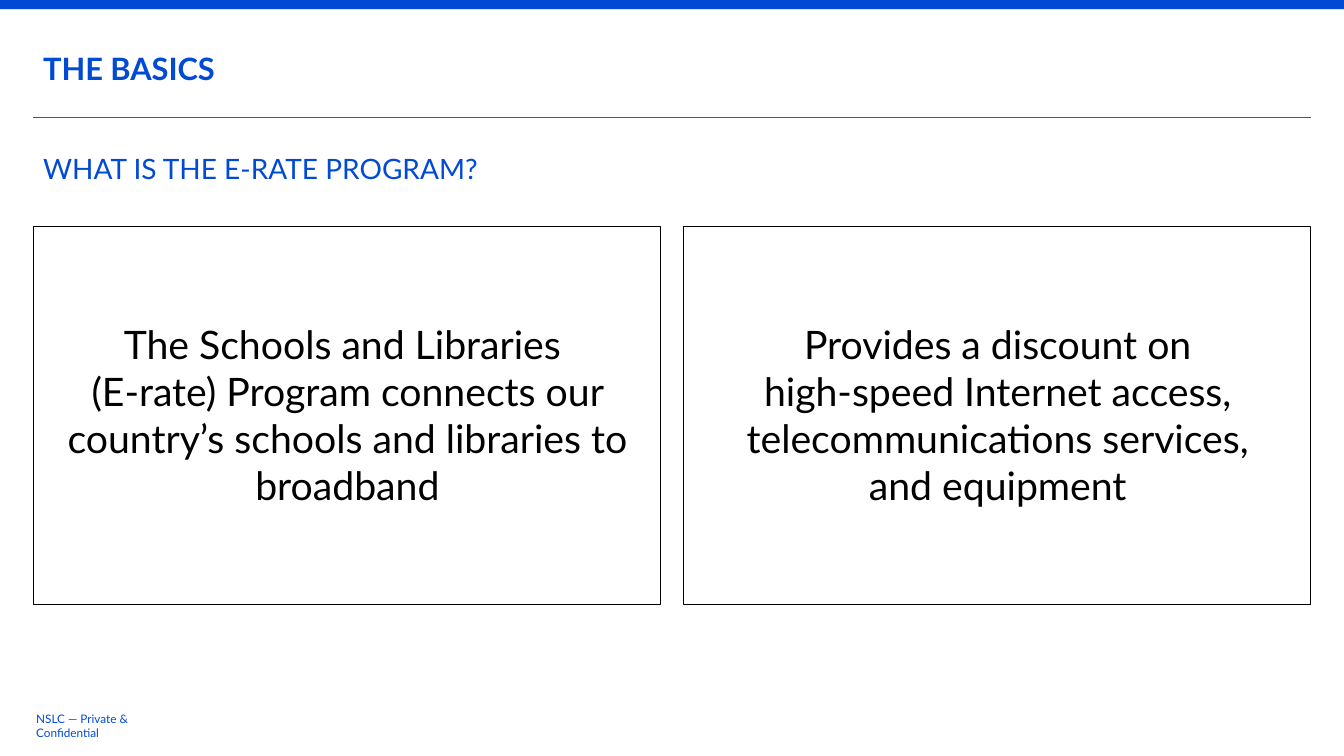
from lxml import etree
from pptx import Presentation
from pptx.dml.color import RGBColor
from pptx.enum.shapes import MSO_CONNECTOR, MSO_SHAPE
from pptx.enum.text import MSO_ANCHOR, PP_ALIGN
from pptx.oxml.ns import qn
from pptx.util import Inches, Pt

STRAIGHT = MSO_CONNECTOR.STRAIGHT
RECTANGLE = MSO_SHAPE.RECTANGLE
TOP, MIDDLE = MSO_ANCHOR.TOP, MSO_ANCHOR.MIDDLE
LEFT, CENTER = PP_ALIGN.LEFT, PP_ALIGN.CENTER

WIDTH, HEIGHT = 13.33, 7.5
MARGIN = 0.33
CONTENT_WIDTH = WIDTH - 2 * MARGIN
GUTTER = 0.23
BLUE, BLACK, WHITE, GRAY = "004AD4", "000000", "FFFFFF", "595959"

HEADING = {"size": Pt(22), "bold": True}
SUBHEADING = {"size": Pt(20)}
STATEMENT = {"size": Pt(28)}
FOOTNOTE = {"size": Pt(8.4)}

STATEMENTS = [
    "The Schools and Libraries \v(E-rate) Program connects our country’s "
    "schools and libraries to broadband",
    "Provides a discount on\vhigh-speed Internet access, "
    "telecommunications services, and equipment",
]


def color(value):
    return RGBColor.from_string(value)


def inches(box):
    return [Inches(length) for length in box]


def add_rectangle(slide, box, fill, outline=None):
    shape = slide.shapes.add_shape(RECTANGLE, *inches(box))
    shape.shadow.inherit = False
    shape.fill.solid()
    shape.fill.fore_color.rgb = color(fill)
    if outline:
        shape.line.color.rgb = color(outline)
        shape.line.width = Pt(0.75)
    else:
        shape.line.fill.background()


def add_text(slide, box, text, font, text_color=BLUE, anchor=MIDDLE,
             alignment=LEFT, margins=(0.1, 0.05)):
    frame = slide.shapes.add_textbox(*inches(box)).text_frame
    horizontal, vertical = inches(margins)
    frame_format = {
        "word_wrap": True, "vertical_anchor": anchor,
        "margin_left": horizontal, "margin_right": horizontal,
        "margin_top": vertical, "margin_bottom": vertical,
    }
    for name, value in frame_format.items():
        setattr(frame, name, value)
    paragraph = frame.paragraphs[0]
    paragraph.text = text
    paragraph.alignment = alignment
    for run in paragraph.runs:
        for name, value in {"name": "Lato", **font}.items():
            setattr(run.font, name, value)
        run.font.color.rgb = color(text_color)
    return paragraph


def add_header(slide, box):
    left, top, width, height = box
    add_rectangle(slide, (0, 0, WIDTH, 0.09), BLUE)
    rule_top = top + height / 2
    rule = slide.shapes.add_connector(
        STRAIGHT, *inches((left, rule_top, left + width, rule_top)))
    rule.line.color.rgb = color(GRAY)
    rule.line.width = Pt(0.75)
    etree.SubElement(rule._element.spPr, qn("a:effectLst"))
    add_text(slide, (left, top, width, 0.69), "THE BASICS", HEADING)
    add_text(slide, (left, top + 1, width, 0.67),
             "WHAT IS THE E-RATE PROGRAM?", SUBHEADING)


def add_statements(slide, box):
    left, top, width, height = box
    card_width = (width - GUTTER * (len(STATEMENTS) - 1)) / len(STATEMENTS)
    for column, statement in enumerate(STATEMENTS):
        card_left = left + column * (card_width + GUTTER)
        add_rectangle(slide, (card_left, top, card_width, height), WHITE, BLACK)
        text_box = (card_left + 0.22, top + 0.88, card_width - 0.43, 1.99)
        paragraph = add_text(slide, text_box, statement, STATEMENT, BLACK,
                             TOP, CENTER)
        paragraph.space_after = Pt(4)


def add_footer(slide, box):
    add_text(slide, box, "NSLC — Private & Confidential", FOOTNOTE,
             margins=(0.03, 0.03))


def main():
    presentation = Presentation()
    presentation.slide_width = Inches(WIDTH)
    presentation.slide_height = Inches(HEIGHT)
    slide = presentation.slides.add_slide(presentation.slide_layouts[6])
    add_header(slide, (MARGIN, 0.33, CONTENT_WIDTH, 1.67))
    add_statements(slide, (MARGIN, HEIGHT * 0.3, CONTENT_WIDTH, HEIGHT * 0.5))
    add_footer(slide, (MARGIN, 7.1, 1.56, 0.2))
    presentation.save("out.pptx")


if __name__ == "__main__":
    main()
